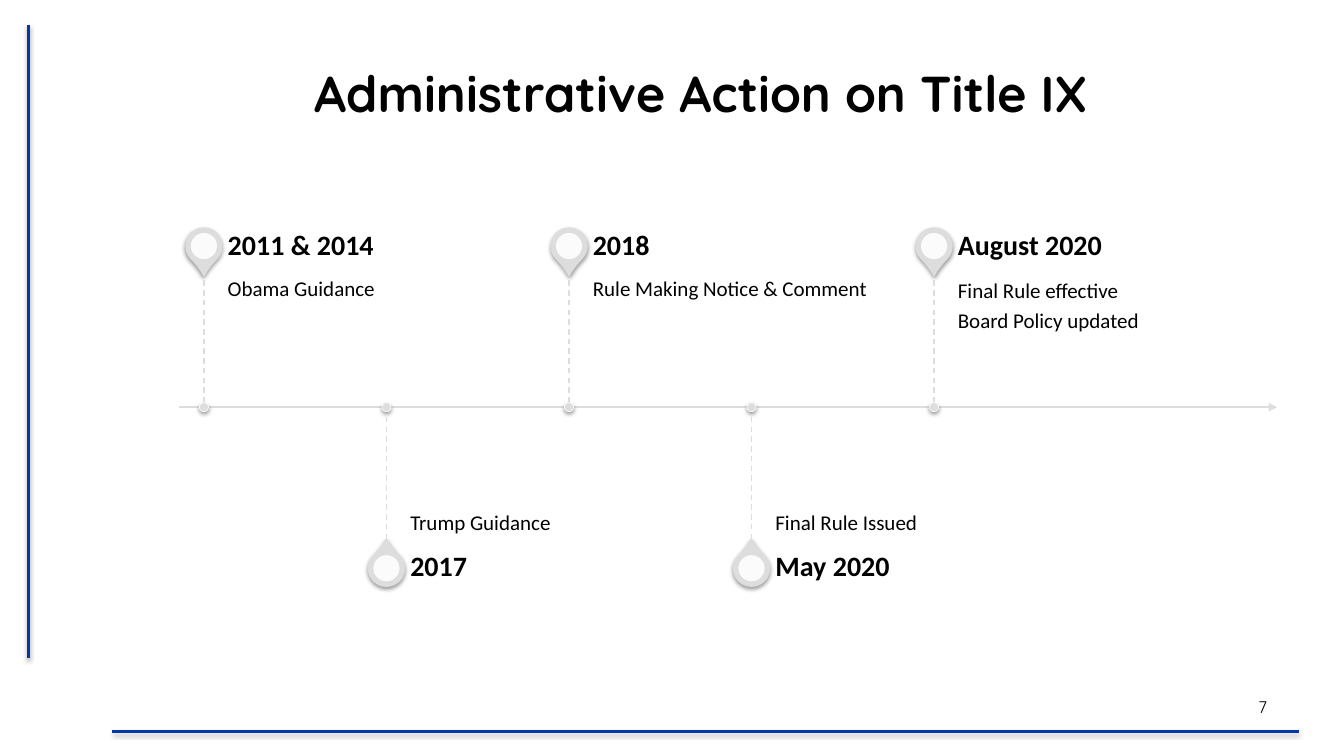
"""Build the Title IX administrative action timeline slide."""
from dataclasses import dataclass

from lxml import etree
from pptx import Presentation
from pptx.dml.color import RGBColor
from pptx.enum import dml, shapes, text
from pptx.oxml import ns
from pptx.shapes.autoshape import Shape
from pptx.shapes.connector import Connector
from pptx.slide import Slide
from pptx.util import Cm, Pt

BLUE = RGBColor(0x00, 0x38, 0xA8)
GREY = RGBColor(0xDD, 0xDD, 0xDD)
WHITE = RGBColor(0xFF, 0xFF, 0xFF)
BLACK = RGBColor(0x00, 0x00, 0x00)

AXIS_Y = 10.26
FIRST_X = 5.14
STEP = 4.6
STEM = 3.44
PIN_OFFSET = 4.06
PIN_SIZE = 0.87
HOLE_SIZE = 0.66
DOT_SIZE = 0.23
LABEL_GAP = 0.6
LABEL_WIDTH = 7.67
DATE_HEIGHT = 1.22


@dataclass(frozen=True)
class Milestone:
    """A date on the timeline with its details."""
    date: str
    details: tuple[str, ...]


@dataclass(frozen=True)
class Style:
    """The look of a block of text."""
    font: str
    size: float
    bold: bool = False
    align: text.PP_ALIGN = text.PP_ALIGN.LEFT
    anchor: text.MSO_ANCHOR = text.MSO_ANCHOR.MIDDLE
    insets: tuple[float, float, float, float] = (0.25, 0.13, 0.25, 0.13)
    spacing: float = 1.0
    after: float = 0


MILESTONES = (
    Milestone("2011 & 2014", ("Obama Guidance",)),
    Milestone("2017", ("Trump Guidance",)),
    Milestone("2018", ("Rule Making Notice & Comment",)),
    Milestone("May 2020", ("Final Rule Issued",)),
    Milestone("August 2020", ("Final Rule effective", "Board Policy updated")),
)
TITLE = Style("Quicksand", 36, True, text.PP_ALIGN.CENTER)
PAGE = Style("Quicksand", 12, align=text.PP_ALIGN.RIGHT, after=6)
DATE = Style("Calibri", 20, True, insets=(0, 0, 0.36, 0), spacing=0.9, after=7)
DETAIL_ABOVE = Style("Calibri", 15, anchor=text.MSO_ANCHOR.TOP,
                     insets=(0, 0.25, 0.25, 0.41), spacing=0.9, after=5.25)
DETAIL_BELOW = Style("Calibri", 15, anchor=text.MSO_ANCHOR.BOTTOM,
                     insets=(0, 0.41, 0, 0.25), spacing=0.9, after=5.25)


def set_effects(part: Shape | Connector, shadow: bool) -> None:
    """Give a part a soft shadow below it, or none."""
    effects = etree.SubElement(part._element.spPr, ns.qn("a:effectLst"))
    if shadow:
        outer = etree.SubElement(effects, ns.qn("a:outerShdw"), blurRad=str(Pt(3.1)),
                                 dist=str(Pt(1.6)), dir="5400000", rotWithShape="0")
        color = etree.SubElement(outer, ns.qn("a:srgbClr"), val=str(BLACK))
        etree.SubElement(color, ns.qn("a:alpha"), val="38000")


def add_line(slide: Slide, start: tuple[float, float], end: tuple[float, float],
             color: RGBColor, width: float, dashed: bool = False,
             arrow: bool = False, shadow: bool = False) -> None:
    """Draw a straight line between two points in centimetres."""
    line = slide.shapes.add_connector(shapes.MSO_CONNECTOR.STRAIGHT,
                                      Cm(start[0]), Cm(start[1]), Cm(end[0]), Cm(end[1]))
    line.line.color.rgb = color
    line.line.width = Pt(width)
    if dashed:
        line.line.dash_style = dml.MSO_LINE.DASH
    if arrow:
        etree.SubElement(line.line._get_or_add_ln(), ns.qn("a:tailEnd"), type="triangle")
    set_effects(line, shadow)


def add_marker(slide: Slide, kind: shapes.MSO_SHAPE, x: float, y: float, size: float,
               fill: RGBColor, outline: RGBColor | None = None, width: float = 0) -> Shape:
    """Draw a marker centred on a point; an outlined one has a shadow."""
    marker = slide.shapes.add_shape(kind, Cm(x - size / 2), Cm(y - size / 2),
                                    Cm(size), Cm(size))
    marker.fill.solid()
    marker.fill.fore_color.rgb = fill
    if outline is None:
        marker.line.fill.background()
    else:
        marker.line.color.rgb = outline
        marker.line.width = Pt(width)
    set_effects(marker, outline is not None)
    return marker


def add_text(slide: Slide, lines: tuple[str, ...], left: float, top: float,
             width: float, height: float, style: Style) -> None:
    """Write one paragraph for each line."""
    frame = slide.shapes.add_textbox(Cm(left), Cm(top), Cm(width), Cm(height)).text_frame
    frame.word_wrap = True
    frame.vertical_anchor = style.anchor
    (frame.margin_left, frame.margin_top,
     frame.margin_right, frame.margin_bottom) = map(Cm, style.insets)
    for index, line in enumerate(lines):
        paragraph = frame.add_paragraph() if index else frame.paragraphs[0]
        paragraph.alignment = style.align
        paragraph.line_spacing = style.spacing
        paragraph.space_after = Pt(style.after)
        run = paragraph.add_run()
        run.text = line
        run.font.name = style.font
        run.font.size = Pt(style.size)
        run.font.bold = style.bold
        run.font.color.rgb = BLACK


def add_milestone(slide: Slide, milestone: Milestone, x: float, above: bool) -> None:
    """Draw a milestone's pin, labels, stem and dot on one side of the axis."""
    side = -1 if above else 1
    pin_y = AXIS_Y + side * PIN_OFFSET
    stem_end = AXIS_Y + side * STEM
    pin = add_marker(slide, shapes.MSO_SHAPE.TEAR, x, pin_y, PIN_SIZE, GREY, GREY, 2)
    pin.adjustments[0] = 1.15
    pin.rotation = 135 if above else 315
    hole = add_marker(slide, shapes.MSO_SHAPE.OVAL, x, pin_y, HOLE_SIZE, WHITE)
    hole_color = hole._element.spPr.find(".//" + ns.qn("a:srgbClr"))
    etree.SubElement(hole_color, ns.qn("a:alpha"), val="90000")

    label_x = x + LABEL_GAP
    add_text(slide, milestone.details, label_x, min(AXIS_Y, stem_end), LABEL_WIDTH, STEM,
             DETAIL_ABOVE if above else DETAIL_BELOW)
    date_top = stem_end - DATE_HEIGHT if above else stem_end
    add_text(slide, (milestone.date,), label_x, date_top, LABEL_WIDTH, DATE_HEIGHT, DATE)
    add_line(slide, (x, min(AXIS_Y, stem_end)), (x, max(AXIS_Y, stem_end)),
             GREY, 1, dashed=True)
    add_marker(slide, shapes.MSO_SHAPE.OVAL, x, AXIS_Y, DOT_SIZE, GREY, WHITE, 0.5)


def main() -> None:
    """Build and save the slide."""
    deck = Presentation()
    deck.slide_width, deck.slide_height = Cm(33.87), Cm(19.05)
    slide = deck.slides.add_slide(deck.slide_layouts[6])
    add_line(slide, (0.72, 16.59), (0.72, 0.64), BLUE, 2, shadow=True)
    add_line(slide, (2.82, 18.44), (32.74, 18.44), BLUE, 2, shadow=True)
    add_text(slide, ("Administrative Action on Title IX ",), 4.01, 0.74, 27.66, 3.18, TITLE)
    add_text(slide, ("7",), 30.12, 17.3, 2.06, 1.02, PAGE)
    add_line(slide, (4.52, AXIS_Y), (32.18, AXIS_Y), GREY, 1.5, arrow=True)
    for index, milestone in enumerate(MILESTONES):
        add_milestone(slide, milestone, FIRST_X + index * STEP, above=index % 2 == 0)
    deck.save("out.pptx")


if __name__ == "__main__":
    main()
